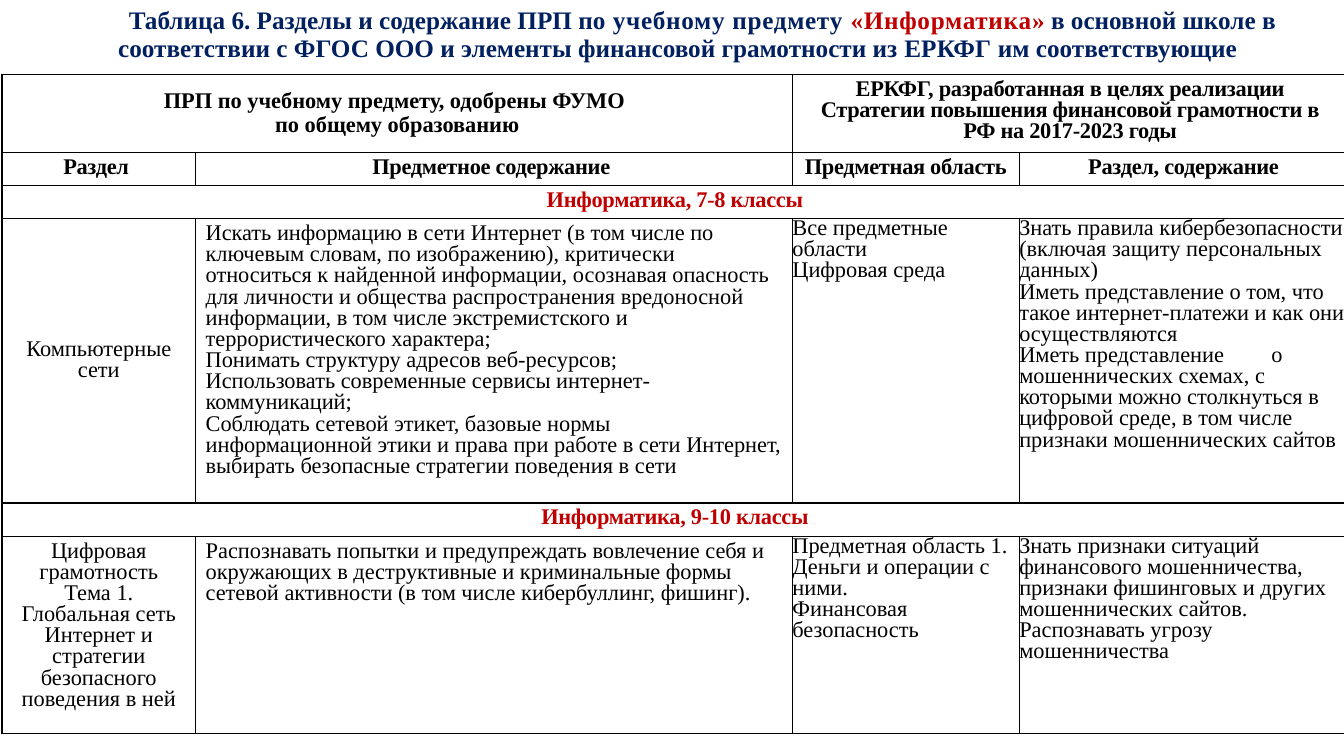
from dataclasses import dataclass

from lxml import etree
from pptx import Presentation
from pptx.dml.color import RGBColor
from pptx.enum.text import MSO_ANCHOR, MSO_AUTO_SIZE, PP_ALIGN
from pptx.oxml.ns import qn
from pptx.util import Inches, Pt


@dataclass(frozen=True)
class Theme:
    font: str = "Times New Roman"
    title_size: float = 18
    table_size: float = 16
    navy: str = "002060"
    red: str = "C00000"
    black: str = "000000"
    white: str = "FFFFFF"
    border: float = 1


T = Theme()
TIGHT = -0.2  # letter spacing of the table headings, points

TITLE = [
    ("Таблица 6. Разделы и содержание ПРП по", {}),
    (" учебному предмету ", {"spacing": 0.5}),
    ("«Информатика", {"color": T.red, "spacing": 0.5}),
    ("» ", {"color": T.red}),
    ("в основной школе в соответствии с ФГОС ООО и "
     "элементы финансовой грамотности из", {}),
    (" ЕРКФГ ", {"spacing": 0.1}),
    ("им соответствующие", {}),
]

COLUMNS = [1.92, 5.92, 2.25, 3.26]
ROWS = [0.77, 0.33, 0.33, 2.82, 0.33, 1.96]

HEADINGS = ["Раздел ", "Предметное содержание ", "Предметная область",
            "Раздел, содержание"]

# Each class group: table row, heading, and the paragraphs of its four cells
GROUPS = [
    (2, "Информатика, 7-8 классы", [
        ["Компьютерные сети"],
        ["Искать информацию в сети Интернет (в том числе по ключевым словам, "
         "по изображению), критически относиться к найденной информации, "
         "осознавая опасность для личности и общества распространения "
         "вредоносной информации, в том числе экстремистского и "
         "террористического характера;",
         "Понимать структуру адресов веб-ресурсов;",
         "Использовать современные сервисы интернет-коммуникаций;",
         "Соблюдать сетевой этикет, базовые нормы информационной этики и права "
         "при работе в сети Интернет, выбирать безопасные стратегии поведения "
         "в сети"],
        ["Все предметные области", "Цифровая среда"],
        ["Знать правила кибербезопасности (включая защиту персональных данных)",
         "Иметь представление о том, что такое интернет-платежи и как они "
         "осуществляются",
         "Иметь представление\tо мошеннических схемах, с которыми можно "
         "столкнуться в цифровой среде, в том числе признаки мошеннических "
         "сайтов"],
    ]),
    (4, "Информатика, 9-10 классы", [
        ["Цифровая грамотность",
         "Тема 1. Глобальная сеть Интернет и стратегии безопасного поведения "
         "в ней"],
        ["Распознавать попытки и предупреждать вовлечение себя и окружающих в "
         "деструктивные и криминальные формы сетевой активности (в том числе "
         "кибербуллинг, фишинг)."],
        ["Предметная область 1. Деньги и операции с ними.",
         "Финансовая безопасность"],
        ["Знать признаки ситуаций финансового мошенничества, признаки "
         "фишинговых и других мошеннических сайтов.",
         "Распознавать угрозу мошенничества"],
    ]),
]


def add_text(p, text, size=T.table_size, color=T.black, bold=False, spacing=0):
    r = p.add_run()
    r.text = text
    r.font.name = T.font
    r.font.size = Pt(size)
    r.font.bold = bold
    r.font.color.rgb = RGBColor.from_string(color)
    if spacing:
        r.font._element.set("spc", str(round(spacing * 100)))
    return r


def add_title(s):
    sp = s.shapes.title
    sp.left, sp.top = Inches(0.02), Inches(0.03)
    sp.width, sp.height = Inches(13.33), Inches(0.65)
    tf = sp.text_frame
    tf.word_wrap = True
    tf.auto_size = MSO_AUTO_SIZE.NONE
    tf.vertical_anchor = MSO_ANCHOR.TOP
    p = tf.paragraphs[0]
    p.alignment = PP_ALIGN.CENTER
    p.line_spacing = 0.9
    p.space_before = Pt(0)
    pPr = p._p.get_or_add_pPr()
    pPr.set("marL", str(Inches(0.07)))
    pPr.set("indent", str(Inches(0.49)))
    for text, fmt in TITLE:
        add_text(p, text, **{"size": T.title_size, "color": T.navy,
                             "bold": True, **fmt})


def style_cell(cell):
    cell.fill.solid()
    cell.fill.fore_color.rgb = RGBColor.from_string(T.white)
    tcPr = cell._tc.get_or_add_tcPr()
    # Borders come before the fill
    for i, side in enumerate(("lnL", "lnR", "lnT", "lnB")):
        ln = etree.Element(qn(f"a:{side}"), w=str(Pt(T.border)))
        fill = etree.SubElement(ln, qn("a:solidFill"))
        etree.SubElement(fill, qn("a:srgbClr"), val=T.black)
        tcPr.insert(i, ln)


def fill_cell(cell, paragraphs, center=False, middle=False, inset=True,
              line=0.85, **fmt):
    tf = cell.text_frame
    tf.word_wrap = True
    cell.vertical_anchor = MSO_ANCHOR.MIDDLE if middle else MSO_ANCHOR.TOP
    if not inset:
        cell.margin_left = cell.margin_right = Inches(0)
        cell.margin_top = cell.margin_bottom = Inches(0)
    for i, text in enumerate(paragraphs):
        p = tf.add_paragraph() if i else tf.paragraphs[0]
        p.alignment = PP_ALIGN.CENTER if center else PP_ALIGN.LEFT
        p.line_spacing = line
        add_text(p, text, **fmt)


def add_grid(s):
    frame = s.shapes.add_table(len(ROWS), len(COLUMNS), Inches(0.02),
                               Inches(0.74), Inches(sum(COLUMNS)),
                               Inches(sum(ROWS)))
    table = frame.table
    table.first_row = table.horz_banding = False
    for column, width in zip(table.columns, COLUMNS):
        column.width = Inches(width)
    for row, height in zip(table.rows, ROWS):
        row.height = Inches(height)
    for cell in table.iter_cells():
        style_cell(cell)
    return table


def add_headings(table):
    heading = {"center": True, "bold": True}
    for first, last in ((0, 1), (2, 3)):
        table.cell(0, first).merge(table.cell(0, last))
    fill_cell(table.cell(0, 0),
              ["ПРП по учебному предмету, одобрены ФУМО ",
               "по общему образованию"],
              middle=True, line=0.95, **heading)
    fill_cell(table.cell(0, 2),
              ["ЕРКФГ, разработанная в целях реализации Стратегии повышения "
               "финансовой грамотности в РФ на 2017-2023 годы"],
              spacing=TIGHT, **heading)
    for col, text in enumerate(HEADINGS):
        fill_cell(table.cell(1, col), [text], spacing=TIGHT, **heading)


def add_group(table, row, name, contents):
    table.cell(row, 0).merge(table.cell(row, len(COLUMNS) - 1))
    fill_cell(table.cell(row, 0), [name], center=True, bold=True,
              color=T.red, spacing=TIGHT)
    for col, paragraphs in enumerate(contents):
        fill_cell(table.cell(row + 1, col), paragraphs, center=col == 0,
                  middle=len(paragraphs) == 1 and col == 0, inset=col < 2)


def main():
    prs = Presentation()
    prs.slide_width, prs.slide_height = Inches(13.33), Inches(7.5)
    s = prs.slides.add_slide(prs.slide_layouts[5])
    add_title(s)
    # Table: headings, then the two class groups
    table = add_grid(s)
    add_headings(table)
    for row, name, contents in GROUPS:
        add_group(table, row, name, contents)
    prs.save("out.pptx")


if __name__ == "__main__":
    main()
